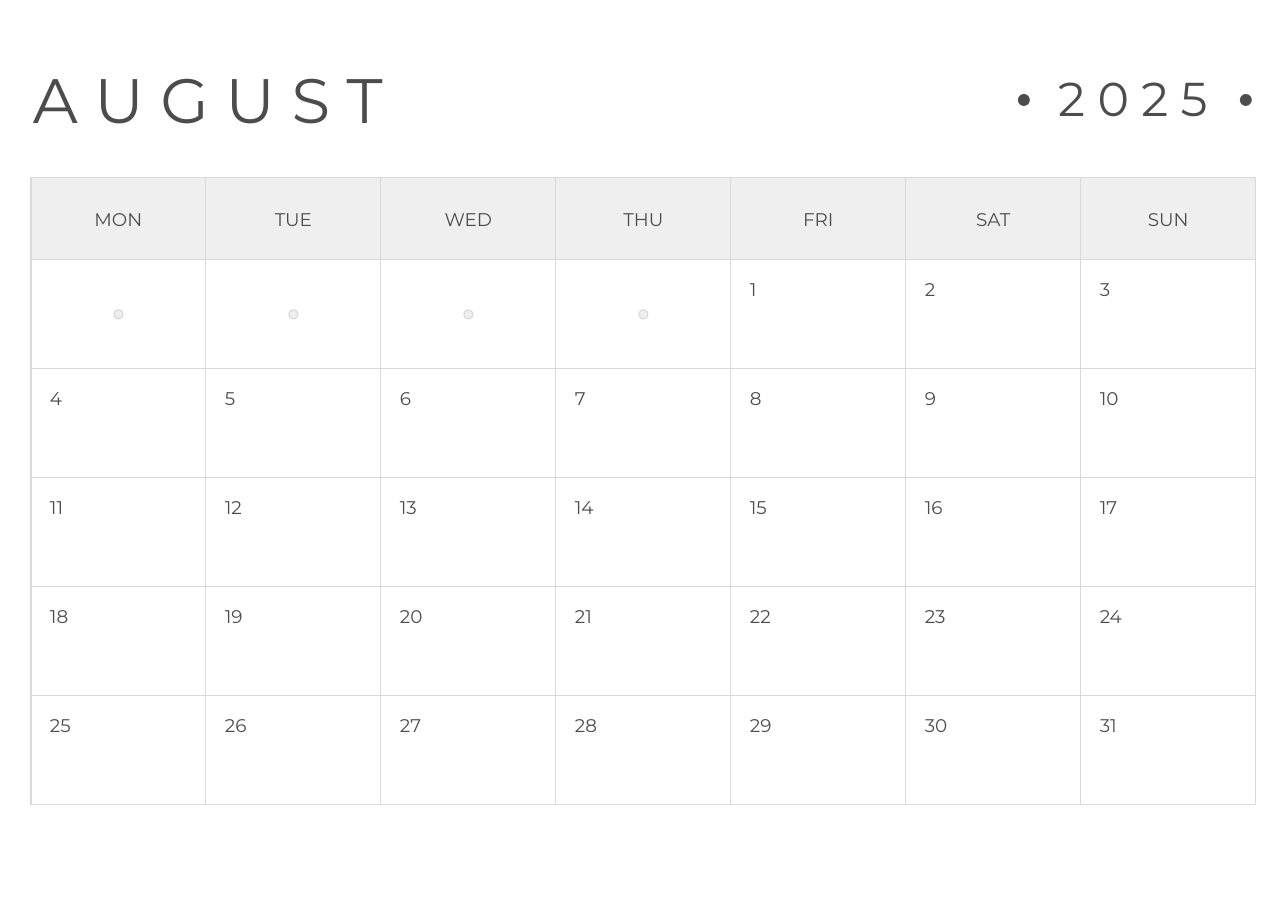
import pptx
import pptx.util
import pptx.dml.color
import pptx.enum.shapes
import pptx.enum.text

PX = 8298  # EMU in one px
FONT = "Montserrat"
INK = pptx.dml.color.RGBColor(0x4C, 0x4C, 0x4C)
RULE = pptx.dml.color.RGBColor(0xD9, 0xD9, 0xD9)
HEADER = pptx.dml.color.RGBColor(0xEF, 0xEF, 0xEF)
EMPTY_DAY = pptx.dml.color.RGBColor(0xEE, 0xEE, 0xEE)

RECTANGLE = pptx.enum.shapes.MSO_SHAPE.RECTANGLE
OVAL = pptx.enum.shapes.MSO_SHAPE.OVAL
LEFT = pptx.enum.text.PP_ALIGN.LEFT
CENTER = pptx.enum.text.PP_ALIGN.CENTER

# Calendar grid, in px
GRID_LEFT, HEADER_TOP = 31, 178
COLUMN_WIDTH, HEADER_HEIGHT, WEEK_HEIGHT = 175, 82, 109
WEEKS_TOP = HEADER_TOP + HEADER_HEIGHT
LABEL_WIDTH, LABEL_HEIGHT = 63, 22
MARK_SIZE = 9

WEEKDAYS = ["MON", "TUE", "WED", "THU", "FRI", "SAT", "SUN"]
WEEK_COUNT = 5
EMPTY_DAYS = 4  # days before the 1st


def px(*lengths):
    return [pptx.util.Emu(length * PX) for length in lengths]


def add_text(page, text, left, top, width, height, size, align=LEFT):
    box = page.shapes.add_textbox(*px(left, top, width, height))
    frame = box.text_frame
    frame.word_wrap = True
    frame.margin_left = frame.margin_right = 0
    frame.margin_top = frame.margin_bottom = 0
    para = frame.paragraphs[0]
    para.text = text
    para.alignment = align
    para.font.name = FONT
    para.font.size = pptx.util.Pt(size)
    para.font.color.rgb = INK


def add_figure(page, kind, left, top, width, height, fill=None, line=None):
    figure = page.shapes.add_shape(kind, *px(left, top, width, height))
    figure.shadow.inherit = False
    if fill is None:
        figure.fill.background()
    else:
        figure.fill.solid()
        figure.fill.fore_color.rgb = fill
    if line is None:
        figure.line.fill.background()
    else:
        figure.line.color.rgb = line
        figure.line.width = pptx.util.Pt(0.75)


def add_weekday(page, name, left):
    add_figure(page, RECTANGLE, left, HEADER_TOP, COLUMN_WIDTH, HEADER_HEIGHT,
               HEADER, RULE)
    add_text(page, name, left + (COLUMN_WIDTH - LABEL_WIDTH) // 2,
             HEADER_TOP + 30, LABEL_WIDTH, LABEL_HEIGHT, 12, CENTER)


def add_day(page, day, left, top):
    add_figure(page, RECTANGLE, left, top, COLUMN_WIDTH, WEEK_HEIGHT, line=RULE)
    if day > 0:
        add_text(page, str(day), left + 19, top + 18,
                 LABEL_WIDTH, LABEL_HEIGHT, 12)
    else:
        add_figure(page, OVAL, left + (COLUMN_WIDTH - MARK_SIZE) // 2,
                   top + (WEEK_HEIGHT - MARK_SIZE) // 2,
                   MARK_SIZE, MARK_SIZE, EMPTY_DAY, RULE)


def main():
    deck = pptx.Presentation()
    deck.slide_width = pptx.util.Inches(11.69)
    deck.slide_height = pptx.util.Inches(8.27)
    page = deck.slides.add_slide(deck.slide_layouts[6])

    # Month and year
    add_text(page, "A U G U S T", 33, 61, 493, 76, 41)
    add_text(page, "2 0 2 5", 1013, 69, 240, 57, 31, CENTER)
    for left in (1018, 1240):
        add_figure(page, OVAL, left, 94, 12, 12, INK)

    # Weekday columns with their days
    for column, name in enumerate(WEEKDAYS):
        left = GRID_LEFT + column * COLUMN_WIDTH
        add_weekday(page, name, left)
        for week in range(WEEK_COUNT):
            day = week * len(WEEKDAYS) + column + 1 - EMPTY_DAYS
            add_day(page, day, left, WEEKS_TOP + week * WEEK_HEIGHT)

    deck.save("out.pptx")


if __name__ == "__main__":
    main()
